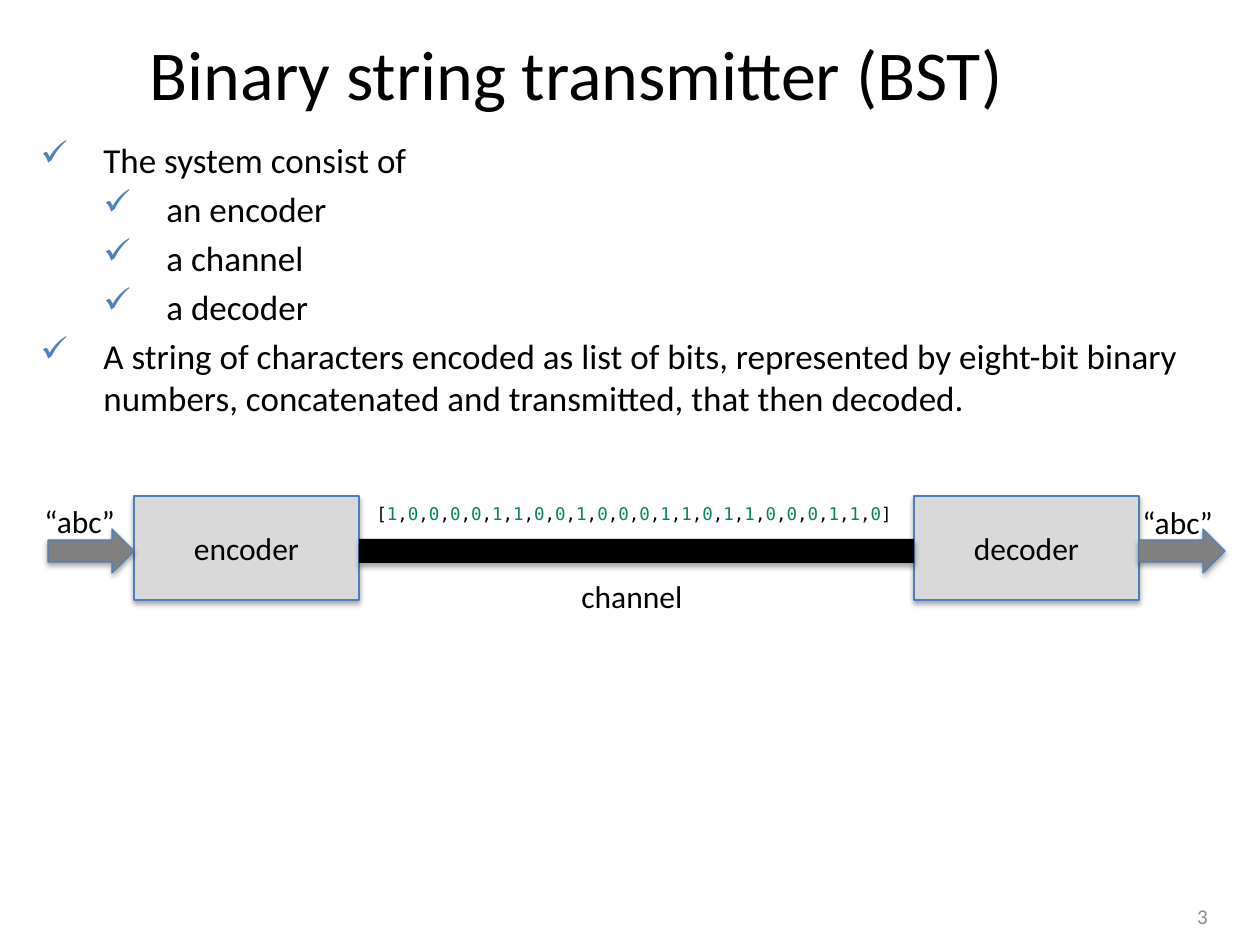
import pptx
import pptx.util
import pptx.dml.color
import pptx.enum.shapes
import pptx.enum.text
import pptx.oxml
import pptx.oxml.ns

PX = 914400 / 126
SHAPE = pptx.enum.shapes.MSO_SHAPE
ALIGN = pptx.enum.text.PP_ALIGN
MIDDLE = pptx.enum.text.MSO_ANCHOR.MIDDLE
NS = pptx.oxml.ns.nsdecls("a")
SHADOW = (f'<a:effectLst {NS}><a:outerShdw blurRad="40000" dist="23000" dir="5400000" '
          'rotWithShape="0"><a:srgbClr val="000000"><a:alpha val="35000"/></a:srgbClr>'
          '</a:outerShdw></a:effectLst>')


def rgb(value):
    return pptx.dml.color.RGBColor.from_string(value)


def add_text(x, y, w, h, text, size, align=ALIGN.LEFT, color="000000", anchor=None):
    sp = s.shapes.add_textbox(*[round(v * PX) for v in (x, y, w, h)])
    tf = sp.text_frame
    tf.word_wrap = True
    tf.text = text
    if anchor is not None:
        tf.vertical_anchor = anchor
    for p in tf.paragraphs:
        p.alignment = align
        for r in p.runs:
            r.font.name = "Calibri"
            r.font.size = pptx.util.Pt(size)
            r.font.color.rgb = rgb(color)
    return tf


prs = pptx.Presentation()
prs.slide_width = pptx.util.Inches(10)
prs.slide_height = pptx.util.Inches(7.5)
s = prs.slides.add_slide(prs.slide_layouts[6])

# Title
add_text(28, 34, 1097, 77, "Binary string transmitter (BST)", 40, ALIGN.CENTER, anchor=MIDDLE)

# Checked list
items = [
    (0, "The system consist of"),
    (1, "an encoder"),
    (1, "a channel"),
    (1, "a decoder"),
    (0, "A string of characters encoded as list of bits, represented by eight-bit "
        "binary numbers, concatenated and transmitted, that then decoded."),
]
tf = add_text(28, 132, 1192, 725, "\n".join(text for level, text in items), 20)
for i, (p, (level, text)) in enumerate(zip(tf.paragraphs, items)):
    p.level = level
    p.space_before = pptx.util.Pt(4 if i else 0)
    pPr = p._p.get_or_add_pPr()
    pPr.set("marL", str(457200 * (level + 1)))
    pPr.set("indent", "-457200")
    for xml in (f'<a:buClr {NS}><a:srgbClr val="4F81BD"/></a:buClr>',
                f'<a:buChar {NS} char="✓"/>'):
        pPr.append(pptx.oxml.parse_xml(xml))

# Slide number
add_text(926, 891, 294, 50, "3", 12, ALIGN.RIGHT, "8C8C8C", MIDDLE)

# Encoder, decoder, channel and the arrows in and out
for kind, x, y, w, h, fill, line, text in [
    (SHAPE.RECTANGLE, 134, 496, 225, 104, "D9D9D9", "4B7EBC", "encoder"),
    (SHAPE.RECTANGLE, 914, 496, 225, 104, "D9D9D9", "4B7EBC", "decoder"),
    (SHAPE.RECTANGLE, 359, 539, 555, 24, "000000", None, ""),
    (SHAPE.RIGHT_ARROW, 48, 529, 86, 44, "808080", "4B7EBC", ""),
    (SHAPE.RIGHT_ARROW, 1139, 529, 86, 44, "808080", "4B7EBC", ""),
]:
    sp = s.shapes.add_shape(kind, *[round(v * PX) for v in (x, y, w, h)])
    sp.fill.solid()
    sp.fill.fore_color.rgb = rgb(fill)
    if line:
        sp.line.color.rgb = rgb(line)
        sp.line.width = pptx.util.Pt(0.75)
    else:
        sp.line.fill.background()
    sp._element.spPr.append(pptx.oxml.parse_xml(SHADOW))
    if text:
        sp.text_frame.text = text
        p = sp.text_frame.paragraphs[0]
        p.alignment = ALIGN.CENTER
        p.runs[0].font.name = "Calibri"
        p.runs[0].font.size = pptx.util.Pt(18)
        p.runs[0].font.color.rgb = rgb("000000")

# Labels
for x, y, w, text in [(32, 496, 102, "“abc”"), (1130, 497, 102, "“abc”"),
                      (569, 571, 134, "channel")]:
    add_text(x, y, w, 50, text, 18)

# Transmitted bits, digits in green
p = add_text(364, 497, 550, 34, "", 10).paragraphs[0]
for char in "[" + ",".join("100001100100011011000110") + "]":
    r = p.add_run()
    r.text = char
    r.font.name = "DejaVu Sans Mono"
    r.font.size = pptx.util.Pt(10)
    r.font.color.rgb = rgb("098658" if char.isdigit() else "000000")

prs.save("out.pptx")
